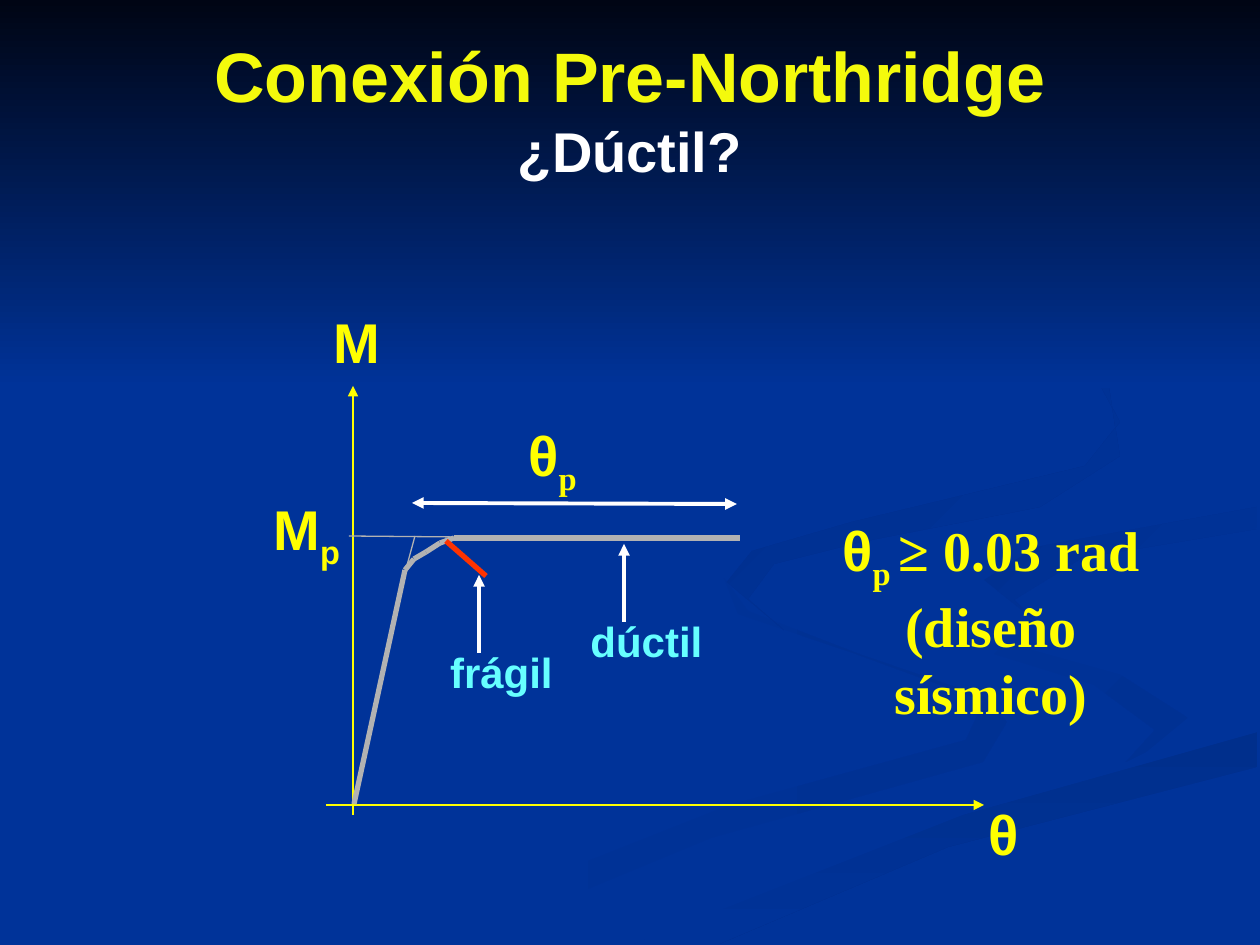
from itertools import pairwise

from pptx import Presentation
from pptx.dml.color import RGBColor
from pptx.enum.shapes import MSO_CONNECTOR, MSO_SHAPE
from pptx.enum.text import MSO_ANCHOR, PP_ALIGN
from pptx.oxml.ns import qn
from pptx.util import Emu, Pt
from lxml import etree

LINE, RECT = MSO_CONNECTOR.STRAIGHT, MSO_SHAPE.RECTANGLE
TOP, MID = MSO_ANCHOR.TOP, MSO_ANCHOR.MIDDLE
LEFT, MIDST = PP_ALIGN.LEFT, PP_ALIGN.CENTER
UNIT = 914400 / 126
BLUE, YELLOW, WHITE, GREY, CYAN, RED = (
    "003399", "FFFF00", "FFFFFF", "B2B2B2", "66FFFF", "FF3300")
BIG = {"size": Pt(32), "name": "Arial", "bold": True}
HEAD = {**BIG, "size": Pt(40)}
SMALL = {**BIG, "size": Pt(24)}
ROMAN = {**BIG, "name": "Times New Roman"}

WAVES = [
    ((BLUE, "003193", 0), [
        (984, 697), (859, 654), (748, 611), (724, 578), (738, 614), (856, 654), (984, 701),
        (966, 740), (730, 805), (378, 944), (455, 944), (711, 838), (983, 762), (1007, 722)]),
    ((BLUE, "003193", 45), [
        (1188, 718), (1119, 674), (975, 634), (912, 585), (965, 645), (1094, 685), (1155, 730),
        (1126, 762), (1186, 732)]),
    (("002F8C", BLUE, 90), [
        (634, 944), (719, 944), (948, 847), (1257, 767), (1257, 732), (963, 815), (717, 906)]),
    ((BLUE, BLUE, 0), [
        (914, 585), (975, 634), (1140, 680), (1188, 718), (1137, 760), (835, 842), (601, 944),
        (634, 944), (963, 815), (1258, 732), (1258, 678), (1068, 634), (984, 583), (1090, 534),
        (1258, 507), (1258, 488), (970, 538)]),
    (("003091", BLUE, 45), [
        (984, 580), (1041, 625), (1014, 600), (1082, 558), (1257, 529), (1257, 507),
        (1036, 547)]),
    (("002F8E", BLUE, 45), [
        (861, 542), (1040, 507), (1120, 456), (1109, 387), (960, 294), (1096, 377), (1120, 422),
        (1085, 466), (852, 522), (752, 551), (727, 582), (784, 630), (748, 599), (774, 564)]),
]
CURVE = [(1, -1), (52, -235), (61, -246), (73, -253), (87, -262), (101, -267), (387, -267)]
LINES = [
    ((-27, 0), (631, 0), YELLOW, 1, ["tailEnd"]),
    ((0, 10), (0, -419), YELLOW, 1, ["tailEnd"]),
    *[(a, b, GREY, 3, []) for a, b in pairwise(CURVE)],
    ((-4, -269), (107, -268), GREY, 0.75, []),
    ((46, -210), (62, -269), GREY, 0.75, []),
    ((59, -302), (384, -301), WHITE, 2.25, ["headEnd", "tailEnd"]),
    ((271, -183), (271, -261), WHITE, 2.25, ["tailEnd"]),
    ((93, -264), (133, -229), RED, 3, []),
    ((126, -152), (126, -230), WHITE, 2.25, ["tailEnd"]),
]
THETA, SUB = ("θ", BIG, YELLOW, 0), ("p", ROMAN, YELLOW, -25)
LABELS = [
    ((-32, -504, 72, 79), [("M", BIG, YELLOW, 0)], LEFT, True),
    ((635, -6, 29, 67), [THETA], MIDST, False),
    ((175, -385, 49, 67), [THETA, SUB], MIDST, False),
    ((225, -196, 137, 63), [("dúctil", SMALL, CYAN, 0)], MIDST, True),
    ((84, -165, 129, 63), [("frágil", SMALL, CYAN, 0)], MIDST, True),
    ((-92, -317, 95, 79), [("M", BIG, YELLOW, 0), ("p", BIG, YELLOW, -25)], LEFT, True),
]


def px(*nums):
    """Turn px into EMU."""
    return [Emu(round(n * UNIT)) for n in nums]


def hue(code):
    """Turn a hex string into a colour."""
    return RGBColor.from_string(code)


def shade(shape, start, end, angle):
    """Fill a shape with a clockwise gradient and no outline."""
    shape.shadow.inherit = False
    shape.line.fill.background()
    shape.fill.gradient()
    shape.fill.gradient_angle = -angle % 360
    for stop, code in zip(shape.fill.gradient_stops, (start, end)):
        stop.color.rgb = hue(code)


def write(slide, box, paras, align=MIDST, inset=False, wrap=False, anchor=TOP):
    """Add a text box made of paragraphs of formatted runs."""
    frame = slide.shapes.add_textbox(*px(*box)).text_frame
    form = {"word_wrap": wrap, "vertical_anchor": anchor}
    if not inset:
        form |= {f"margin_{side}": 0 for side in ("left", "right", "top", "bottom")}
    for key, val in form.items():
        setattr(frame, key, val)
    for num, runs in enumerate(paras):
        para = frame.add_paragraph() if num else frame.paragraphs[0]
        para.alignment = align
        for text, font, code, base in runs:
            if text == "\n":
                para.add_line_break()
                continue
            run = para.add_run()
            run.text = text
            for key, val in font.items():
                setattr(run.font, key, val)
            run.font.color.rgb = hue(code)
            if base:
                run._r.get_or_add_rPr().set("baseline", str(base * 1000))


def stroke(slide, start, end, code, width, tips):
    """Add a line with arrowheads at the named ends."""
    line = slide.shapes.add_connector(LINE, *px(*start, *end))
    line.line.color.rgb = hue(code)
    line.line.width = Pt(width)
    for tip in tips:
        etree.SubElement(line.line._get_or_add_ln(), qn(f"a:{tip}"), type="triangle")
    etree.SubElement(line._element.spPr, qn("a:effectLst"))


def scene(slide, box):
    """Draw the backdrop: waves and a dark band at the top."""
    left, top, wide, _ = box
    for tones, dots in WAVES:
        spots = [(left + x, top + y) for x, y in dots]
        pen = slide.shapes.build_freeform(*spots[0], scale=UNIT)
        pen.add_line_segments(spots[1:], close=True)
        shade(pen.convert_to_shape(), *tones)
    band = slide.shapes.add_shape(RECT, *px(left, top, wide, 388))
    shade(band, "000514", BLUE, 90)


def title(slide, box):
    """Write the two title lines."""
    runs = [("Conexión Pre-Northridge", HEAD, "F4FA0C", 0), ("\n", {}, WHITE, 0),
            ("¿Dúctil?", BIG, WHITE, 0)]
    write(slide, box, [runs], inset=True, wrap=True, anchor=MID)


def graph(slide, zero):
    """Draw the moment and rotation graph around its zero point."""
    left, top = zero
    for (ax, ay), (bx, by), *look in LINES:
        stroke(slide, (left + ax, top + ay), (left + bx, top + by), *look)
    for (x, y, wide, high), runs, align, inset in LABELS:
        write(slide, (left + x, top + y, wide, high), [runs], align, inset)


def note(slide, box):
    """Write the seismic design limit."""
    limit = [THETA, ("p ", ROMAN, YELLOW, -25), ("≥ 0.03 rad", ROMAN, YELLOW, 0)]
    write(slide, box, [limit, [("(diseño sísmico)", ROMAN, YELLOW, 0)]], wrap=True)


def main():
    """Build the slide and save it."""
    deck = Presentation()
    deck.slide_width, deck.slide_height = px(1260, 945)
    slide = deck.slides.add_slide(deck.slide_layouts[6])
    slide.background.fill.solid()
    slide.background.fill.fore_color.rgb = hue(BLUE)
    scene(slide, (0, 0, 1260, 945))
    title(slide, (63, 11, 1134, 195))
    graph(slide, (353, 805))
    note(slide, (833, 515, 316, 135))
    deck.save("out.pptx")


if __name__ == "__main__":
    main()
